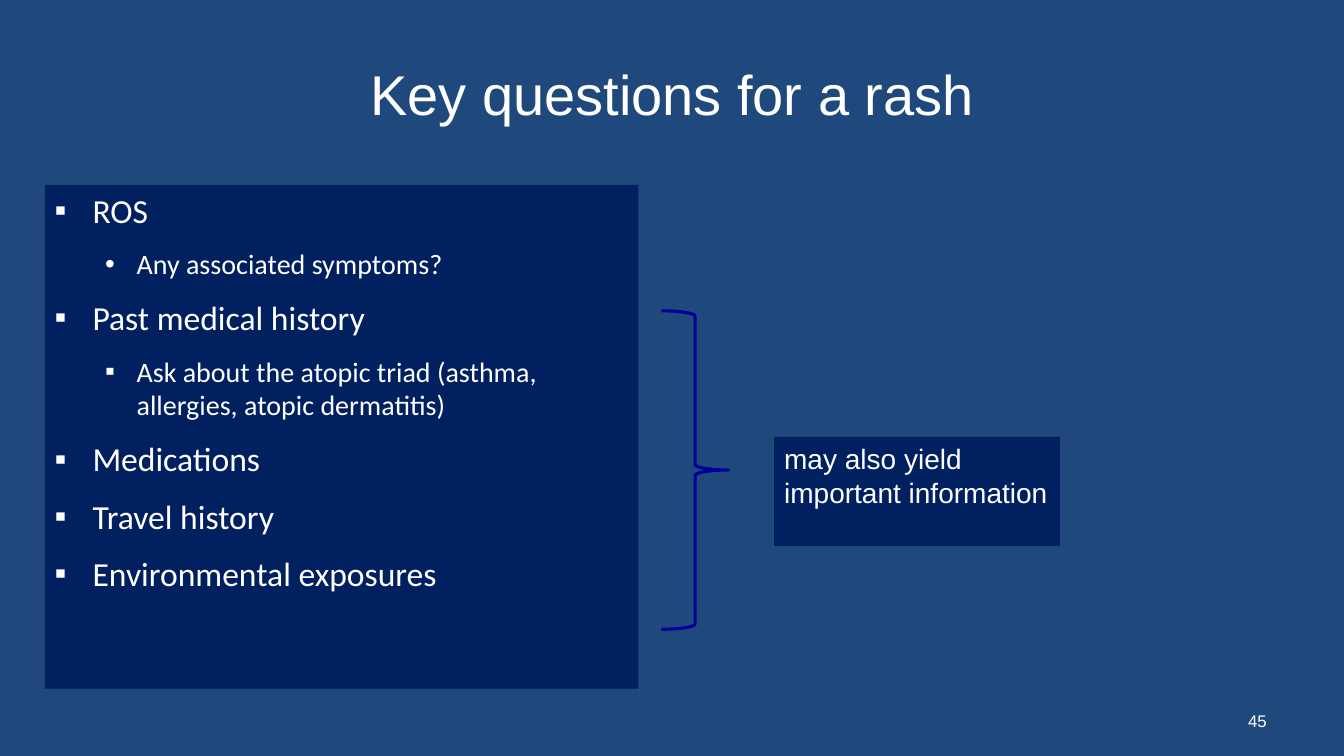
import pptx
import pptx.util
import pptx.dml.color
import pptx.enum.shapes
import pptx.enum.text
import lxml.etree

Pt = pptx.util.Pt
KIND = pptx.enum.shapes.MSO_SHAPE
ALIGN = pptx.enum.text.PP_ALIGN
MID = pptx.enum.text.MSO_ANCHOR.MIDDLE
TOP = pptx.enum.text.MSO_ANCHOR.TOP
BACK, NAVY, WHITE, BLUE = "1F497D", "002060", "FFFFFF", "000099"
ITEMS = [
    (0, "▪", "ROS"),
    (1, "•", "Any associated symptoms?"),
    (0, "▪", "Past medical history"),
    (1, "▪", "Ask about the atopic triad (asthma, allergies, atopic dermatitis)"),
    (0, "▪", "Medications"),
    (0, "▪", "Travel history"),
    (0, "▪", "Environmental exposures"),
]
LEVELS = [(24, 27, -27), (20, 58.5, -22.5)]


def hue(code):
    """Return the colour for a hex string."""
    return pptx.dml.color.RGBColor.from_string(code)


def style(item, form):
    """Set each attribute of an item from a dict."""
    for name, value in form.items():
        setattr(item, name, value)


def paint(fill, code):
    """Give a fill one solid colour."""
    fill.solid()
    fill.fore_color.rgb = hue(code)


def panel(slide, box):
    """Draw a plain navy panel in the box."""
    shape = slide.shapes.add_shape(KIND.RECTANGLE, *map(Pt, box))
    shape.shadow.inherit = False
    paint(shape.fill, NAVY)
    shape.line.fill.background()
    return shape


def write(para, text, size, face="Arial", align=ALIGN.LEFT):
    """Put white text in a paragraph."""
    para.alignment = align
    run = para.add_run()
    run.text = text
    style(run.font, {"size": Pt(size), "name": face})
    run.font.color.rgb = hue(WHITE)


def label(slide, box, text, size, align):
    """Place one line of text, centred upright in the box."""
    frame = slide.shapes.add_textbox(*map(Pt, box)).text_frame
    style(frame, {"word_wrap": True, "vertical_anchor": MID})
    write(frame.paragraphs[0], text, size, align=align)


def bullet(para, mark, left, hang):
    """Give a paragraph a bullet and a hanging indent."""
    props = para._p.get_or_add_pPr()
    props.set("marL", str(Pt(left)))
    props.set("indent", str(Pt(hang)))
    space = pptx.oxml.ns.qn
    font = lxml.etree.SubElement(props, space("a:buFont"))
    font.set("typeface", "Arial")
    lxml.etree.SubElement(props, space("a:buChar")).set("char", mark)


def topics(slide, box):
    """Fill the box with the list of questions."""
    frame = panel(slide, box).text_frame
    style(frame, {"word_wrap": True, "vertical_anchor": TOP})
    for row, (level, mark, text) in enumerate(ITEMS):
        para = frame.add_paragraph() if row else frame.paragraphs[0]
        size, left, hang = LEVELS[level]
        style(para, {"level": level, "space_before": Pt(12)})
        write(para, text, size, "Calibri")
        bullet(para, mark, left, hang)


def remark(slide, box):
    """Draw the brace and, to its right, the note it points at."""
    left, top, wide, high = box
    brace = slide.shapes.add_shape(
        KIND.RIGHT_BRACE, Pt(left), Pt(top), Pt(48), Pt(high))
    brace.shadow.inherit = False
    brace.fill.background()
    brace.line.color.rgb = hue(BLUE)
    brace.line.width = Pt(2.25)
    brace.adjustments[0] = 0.08
    note = (left + 80.5, top + 90, wide - 80.5, 78)
    frame = panel(slide, note).text_frame
    style(frame, {"word_wrap": False, "vertical_anchor": TOP})
    write(frame.paragraphs[0], "may also yield", 20)
    write(frame.add_paragraph(), "important information", 20)


def main():
    """Build the slide and save it."""
    deck = pptx.Presentation()
    style(deck, {"slide_width": Pt(960), "slide_height": Pt(540)})
    slide = deck.slides.add_slide(deck.slide_layouts[6])
    paint(slide.background.fill, BACK)
    label(slide, (48, 21.6, 864, 90), "Key questions for a rash", 40, ALIGN.CENTER)
    topics(slide, (32, 132, 424, 360))
    remark(slide, (472.5, 222, 284.5, 227.5))
    label(slide, (688, 500.5, 224, 28.8), "45", 12, ALIGN.RIGHT)
    deck.save("out.pptx")


if __name__ == "__main__":
    main()
